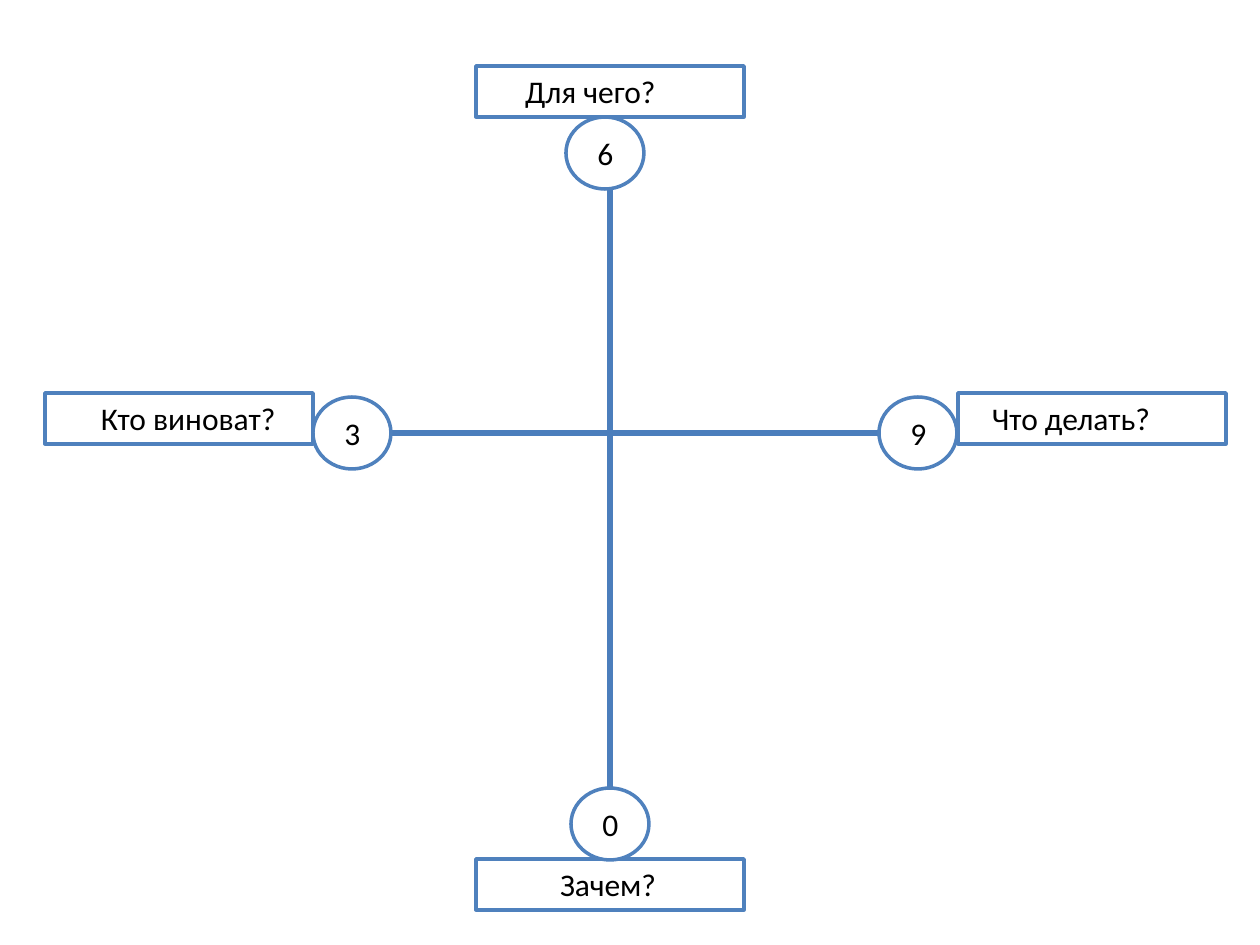
from dataclasses import dataclass

from lxml.etree import SubElement
from pptx import Presentation
from pptx.dml.color import RGBColor
from pptx.enum.shapes import MSO_CONNECTOR, MSO_SHAPE
from pptx.enum.text import MSO_ANCHOR, MSO_AUTO_SIZE, PP_ALIGN
from pptx.oxml.ns import qn
from pptx.shapes.autoshape import Shape
from pptx.shapes.connector import Connector
from pptx.shapes.shapetree import SlideShapes
from pptx.util import Emu, Pt

PX_PER_INCH = 126
SLIDE_SIZE = (1260, 945)
QUESTION_SIZE = (268, 51)
MARK_SIZE = (78, 72)
INSET = 13


@dataclass(frozen=True)
class Theme:
    fill: RGBColor = RGBColor(0xFF, 0xFF, 0xFF)
    outline: RGBColor = RGBColor(0x4F, 0x81, 0xBD)
    axis: RGBColor = RGBColor(0x4B, 0x7E, 0xBC)
    text: RGBColor = RGBColor(0, 0, 0)
    font: str = "Calibri"
    text_size: Pt = Pt(18)
    outline_width: Pt = Pt(2)
    axis_width: Pt = Pt(3)


@dataclass(frozen=True)
class Question:
    text: str
    left: int
    top: int
    indent: int


@dataclass(frozen=True)
class Mark:
    digit: str
    left: int
    top: int


THEME = Theme()
TOP = Question("Для чего?", 476, 66, 36)
RIGHT = Question("Что делать?", 958, 393, 21)
BOTTOM = Question("Зачем?", 476, 859, 71)
LEFT = Question("Кто виноват?", 45, 393, 43)
MARKS = (
    Mark("9", 879, 397),
    Mark("6", 566, 117),
    Mark("3", 313, 397),
    Mark("0", 571, 788),
)
HORIZONTAL_AXIS_Y = 433


def px(length: int) -> Emu:
    return Emu(round(length * 914400 / PX_PER_INCH))


def add_label(shapes: SlideShapes, kind: MSO_SHAPE, box: tuple[int, int, int, int],
              text: str, align: PP_ALIGN, indent: int = 0) -> Shape:
    """Draw an outlined shape whose text starts indent px inside the usual inset."""
    label = shapes.add_shape(kind, *map(px, box))
    label.shadow.inherit = False
    label.fill.solid()
    label.fill.fore_color.rgb = THEME.fill
    label.line.color.rgb = THEME.outline
    label.line.width = THEME.outline_width

    frame = label.text_frame
    frame_format = {
        "word_wrap": True,
        "auto_size": MSO_AUTO_SIZE.SHAPE_TO_FIT_TEXT,
        "vertical_anchor": MSO_ANCHOR.TOP,
        "margin_left": px(INSET + indent),
    }
    for attribute, value in frame_format.items():
        setattr(frame, attribute, value)

    paragraph = frame.paragraphs[0]
    paragraph.alignment = align
    run = paragraph.add_run()
    run.text = text
    for attribute, value in {"name": THEME.font, "size": THEME.text_size}.items():
        setattr(run.font, attribute, value)
    run.font.color.rgb = THEME.text
    return label


def add_question(shapes: SlideShapes, question: Question) -> Shape:
    return add_label(shapes, MSO_SHAPE.RECTANGLE,
                     (question.left, question.top, *QUESTION_SIZE),
                     question.text, PP_ALIGN.LEFT, question.indent)


def add_mark(shapes: SlideShapes, mark: Mark) -> Shape:
    return add_label(shapes, MSO_SHAPE.OVAL, (mark.left, mark.top, *MARK_SIZE),
                     mark.digit, PP_ALIGN.CENTER)


def add_axis(shapes: SlideShapes, start: tuple[int, int], end: tuple[int, int]) -> Connector:
    axis = shapes.add_connector(MSO_CONNECTOR.STRAIGHT, *map(px, (*start, *end)))
    axis.line.color.rgb = THEME.axis
    axis.line.width = THEME.axis_width
    SubElement(axis._element.spPr, qn("a:effectLst"))
    return axis


def main() -> None:
    presentation = Presentation()
    presentation.slide_width, presentation.slide_height = map(px, SLIDE_SIZE)
    shapes = presentation.slides.add_slide(presentation.slide_layouts[6]).shapes

    top, _, bottom, _ = [add_question(shapes, question)
                         for question in (TOP, RIGHT, BOTTOM, LEFT)]

    width, height = QUESTION_SIZE
    center_x = TOP.left + width // 2
    vertical = add_axis(shapes, (center_x, TOP.top + height), (center_x, BOTTOM.top))
    vertical.begin_connect(top, 2)
    vertical.end_connect(bottom, 0)
    add_axis(shapes, (LEFT.left + width, HORIZONTAL_AXIS_Y),
             (RIGHT.left, HORIZONTAL_AXIS_Y))

    for mark in MARKS:
        add_mark(shapes, mark)

    presentation.save("out.pptx")


if __name__ == "__main__":
    main()
